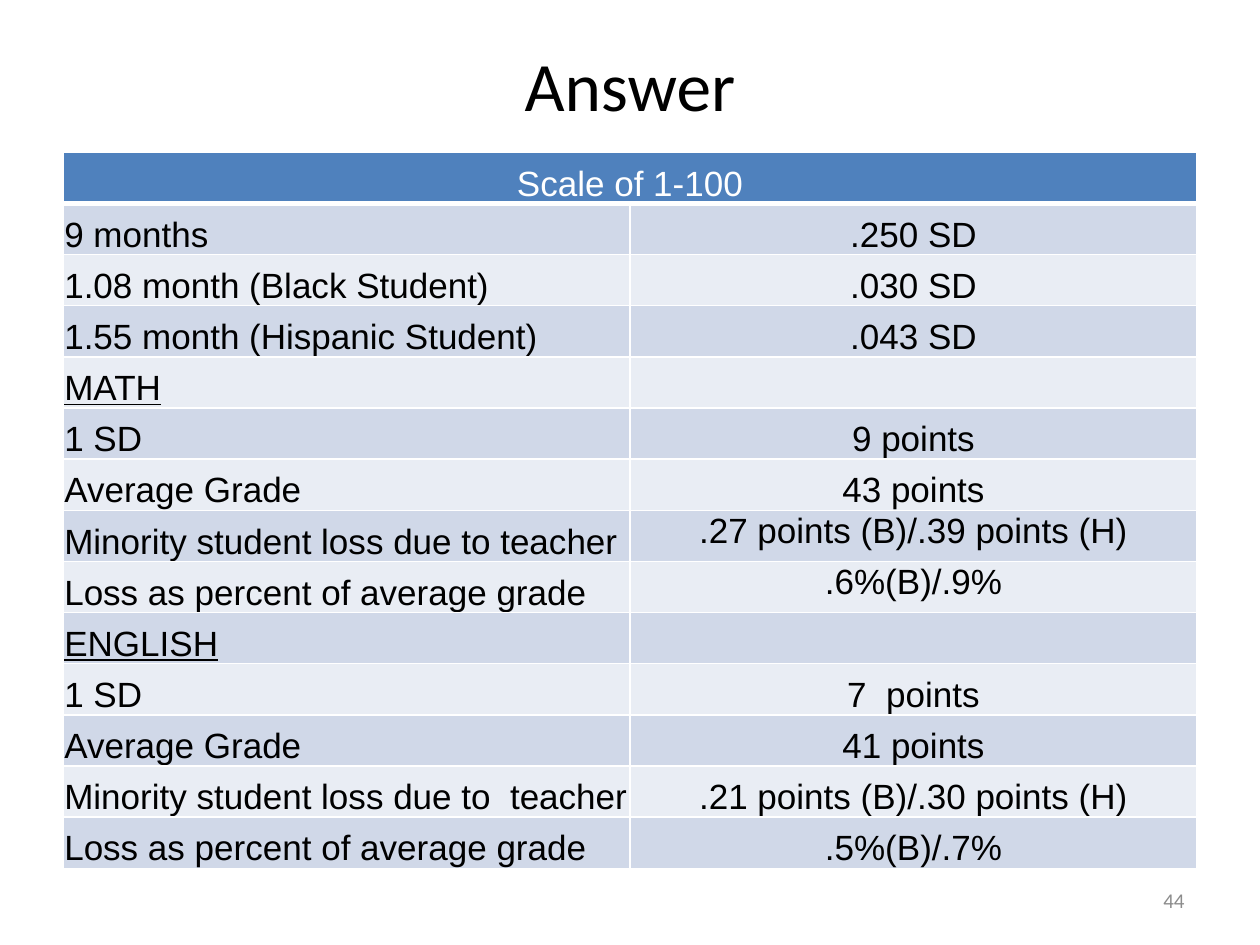
import pptx
import pptx.dml.color
import pptx.enum.text
import pptx.oxml
import pptx.oxml.ns
import pptx.util

PX = 9525
COLORS = {
    "header": "4F81BD",
    "odd": "D0D8E8",
    "even": "E9EDF4",
    "border": "FFFFFF",
    "header_text": "FFFFFF",
    "text": "000000",
    "page_number": "8C8C8C",
}
ALIGN = pptx.enum.text.PP_ALIGN
ANCHOR = pptx.enum.text.MSO_ANCHOR

HEADER = "Scale of 1-100"
ROWS = [
    ("9 months", ".250 SD"),
    ("1.08 month (Black Student)", ".030 SD"),
    ("1.55 month (Hispanic Student)", ".043 SD"),
    ("MATH", ""),
    ("1 SD", "9 points"),
    ("Average Grade", "43 points"),
    ("Minority student loss due to teacher", ".27 points (B)/.39 points (H)"),
    ("Loss as percent of average grade", ".6%(B)/.9%"),
    ("ENGLISH", ""),
    ("1 SD", "7  points"),
    ("Average Grade", "41 points"),
    ("Minority student loss due to  teacher", ".21 points (B)/.30 points (H)"),
    ("Loss as percent of average grade", ".5%(B)/.7%"),
]
TOP_ANCHORED_ROWS = (7, 8)


def px(length):
    return pptx.util.Emu(length * PX)


def rgb(name):
    return pptx.dml.color.RGBColor.from_string(COLORS[name])


class SlideBuilder:
    def __init__(self, slide):
        self.slide = slide

    def style(self, paragraph, font, size, color, align, underline=None):
        paragraph.alignment = align
        paragraph.font.name = font
        paragraph.font.size = pptx.util.Pt(size)
        paragraph.font.color.rgb = rgb(color)
        paragraph.font.underline = underline

    def text(self, text, left, top, width, height, size, color, align):
        shape = self.slide.shapes.add_textbox(px(left), px(top), px(width), px(height))
        frame = shape.text_frame
        frame.word_wrap = True
        frame.vertical_anchor = ANCHOR.MIDDLE
        frame.text = text
        self.style(frame.paragraphs[0], "Calibri", size, color, align)

    def table(self, left, top, column_width, row_height, rows, columns):
        shape = self.slide.shapes.add_table(
            rows, columns, px(left), px(top), px(column_width * columns), px(row_height * rows))
        table = shape.table
        for column in table.columns:
            column.width = px(column_width)
        for row in table.rows:
            row.height = px(row_height)
        return table

    def borders(self, cell, widths):
        """Draw the cell's edges; widths maps L, R, T and B to points."""
        properties = cell._tc.get_or_add_tcPr()
        for side, width in widths.items():
            properties.append(pptx.oxml.parse_xml(
                f'<a:ln{side} {pptx.oxml.ns.nsdecls("a")} w="{pptx.util.Pt(width)}">'
                f'<a:solidFill><a:srgbClr val="{COLORS["border"]}"/></a:solidFill></a:ln{side}>'))

    def cell(self, cell, text, fill, color, align, anchor=ANCHOR.BOTTOM,
             underline=None, top_border=1, bottom_border=1):
        cell.margin_left = cell.margin_right = cell.margin_top = px(1)
        cell.margin_bottom = 0
        cell.vertical_anchor = anchor
        self.borders(cell, {"L": 1, "R": 1, "T": top_border, "B": bottom_border})
        cell.fill.solid()
        cell.fill.fore_color.rgb = rgb(fill)
        cell.text = text
        self.style(cell.text_frame.paragraphs[0], "Arial", 20, color, align, underline)


def main():
    presentation = pptx.Presentation()
    presentation.slide_width, presentation.slide_height = px(960), px(720)
    builder = SlideBuilder(presentation.slides.add_slide(presentation.slide_layouts[6]))

    builder.text("Answer", 48, 29, 864, 69, 39.6, "text", ALIGN.CENTER)

    table = builder.table(48, 116, 432, 39, len(ROWS) + 1, 2)
    table.cell(0, 0).merge(table.cell(0, 1))
    builder.cell(table.cell(0, 0), HEADER, "header", "header_text", ALIGN.CENTER, bottom_border=3)
    for index, (label, value) in enumerate(ROWS, start=1):
        fill = "odd" if index % 2 else "even"
        top_border = 3 if index == 1 else 1
        is_section = not value
        anchor = ANCHOR.TOP if index in TOP_ANCHORED_ROWS else ANCHOR.BOTTOM
        builder.cell(table.cell(index, 0), label, fill, "text", ALIGN.LEFT,
                     underline=is_section, top_border=top_border)
        builder.cell(table.cell(index, 1), value, fill, "text", ALIGN.CENTER,
                     anchor=anchor, top_border=top_border)

    builder.text("44", 688, 667, 224, 38, 12, "page_number", ALIGN.RIGHT)
    presentation.save("out.pptx")


if __name__ == "__main__":
    main()
